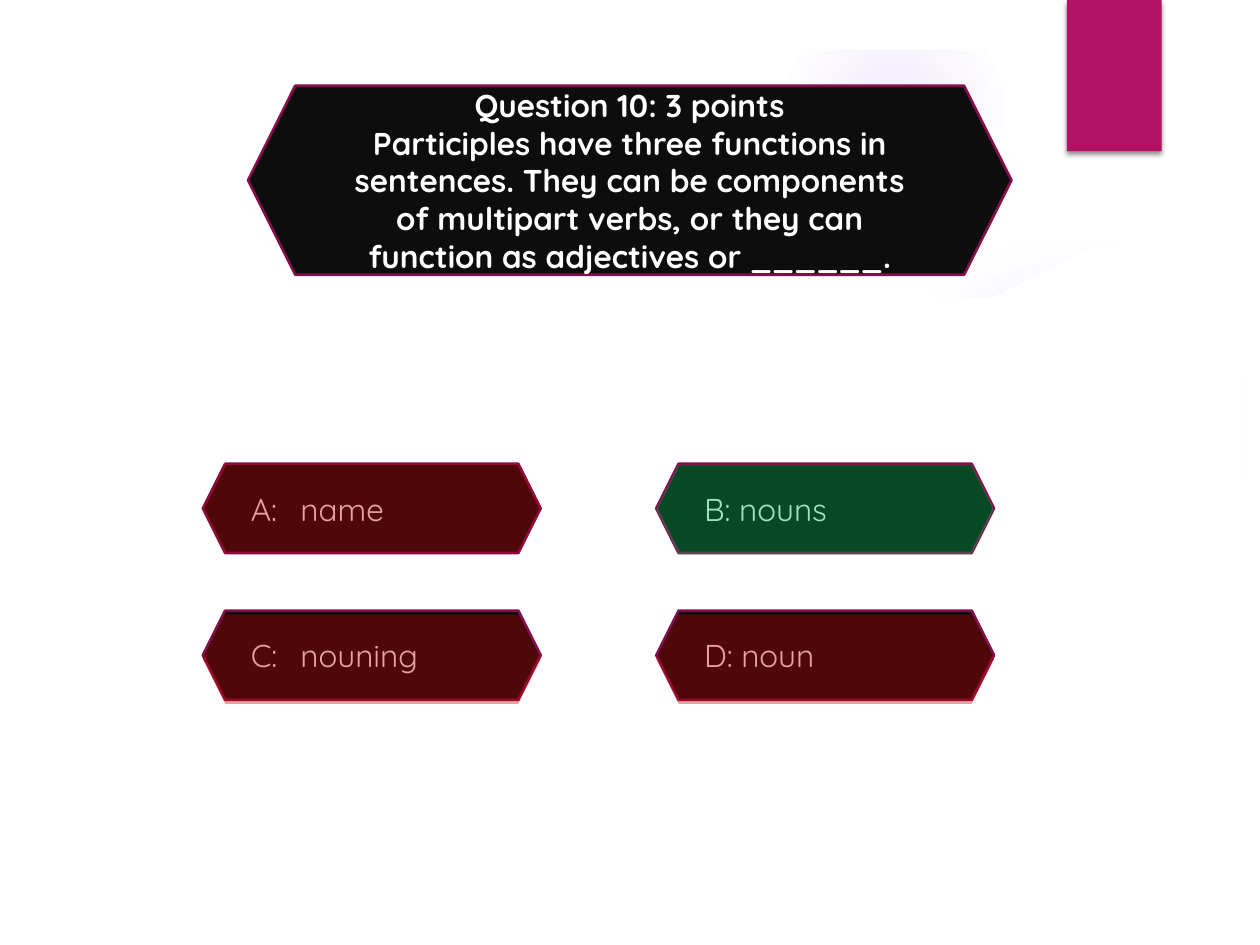
from lxml import etree
from pptx import Presentation
from pptx import util as u
from pptx.dml import color
from pptx.enum import shapes, text
from pptx.oxml import ns

Cm = u.Cm
hues = {"ink": "0D0D0D", "edge": "840D4B", "tab": "B31166", "white": "FFFFFF",
        "glow": "9B6BF2", "right": "00B050", "wrong": "C00000", "shade": "000000"}

deck = Presentation()
deck.slide_width, deck.slide_height = Cm(25.4), Cm(19.05)
slide = deck.slides.add_slide(deck.slide_layouts[6])


def paint(shape, fill, line=None):
    shape.shadow.inherit = False
    shape.fill.solid()
    shape.fill.fore_color.rgb = color.RGBColor.from_string(hues[fill])
    if line:
        shape.line.color.rgb = color.RGBColor.from_string(hues[line])
        shape.line.width = u.Pt(1.5)
    else:
        shape.line.fill.background()
    return shape


def add(kind, x, y, w, h, fill, line=None):
    box = slide.shapes.add_shape(kind, Cm(x), Cm(y), Cm(w), Cm(h))
    return paint(box, fill, line)


glows = [(17.5, 4.65, 7.82, [(0, 7), (36, 6), (69, 0)]),
         (15.8, 0, 4.45, [(0, 14), (36, 7), (73, 0)])]
for x, y, size, stops in glows:
    glow = add(shapes.MSO_SHAPE.OVAL, x, y, size, size, "glow")
    marks = "".join(
        f'<a:gs pos="{pos * 1000}"><a:srgbClr val="{hues["glow"]}">'
        f'<a:alpha val="{alpha * 1000}"/></a:srgbClr></a:gs>' for pos, alpha in stops)
    grad = etree.fromstring(
        f'<a:gradFill {ns.nsdecls("a")}><a:gsLst>{marks}</a:gsLst><a:path path="circle">'
        '<a:fillToRect l="50000" t="50000" r="50000" b="50000"/></a:path></a:gradFill>')
    solid = glow.element.spPr.find(ns.qn("a:solidFill"))
    glow.element.spPr.replace(solid, grad)

curve = [(1.35, 5.16), (4.39, 5.51), (7.8, 5.79), (11.15, 5.92), (14.91, 5.94),
         (17.88, 5.82), (19.94, 5.69), (21.98, 5.46), (24.05, 5.16)]
panel = slide.shapes.build_freeform(1.35, 17.75, scale=Cm(1))
panel.add_line_segments(curve + [(24.05, 17.75)])
paint(panel.convert_to_shape(), "white")

frame = slide.shapes.build_freeform(0, 0, scale=Cm(1))
frame.add_line_segments([(0, 19.05), (25.4, 19.05), (25.4, 0)])
frame.move_to(24, 17.65)
frame.add_line_segments([(1.42, 17.65), (1.42, 1.42), (24, 1.42)])
paint(frame.convert_to_shape(), "white")

flag = add(shapes.MSO_SHAPE.RECTANGLE, 21.51, 0, 1.91, 3.05, "tab")
flag.element.spPr.find(ns.qn("a:effectLst")).append(etree.fromstring(
    f'<a:outerShdw {ns.nsdecls("a")} blurRad="{u.Pt(3)}" dist="{u.Pt(2)}" dir="5400000">'
    f'<a:srgbClr val="{hues["shade"]}"><a:alpha val="45000"/></a:srgbClr></a:outerShdw>'))

hexa = shapes.MSO_SHAPE.HEXAGON
wide, high = 6.81, 1.8
cols, rows = (4.09, 13.23), (9.35, 12.31)
words = ["A:\tname", "B: nouns", "C:\tnouning", "D: noun"]
spots = [(x, y) for y in rows for x in cols]
boxes = [(add(hexa, x, y, wide, high, "ink", "edge"), [word], text.PP_ALIGN.LEFT)
         for (x, y), word in zip(spots, words)]

ask = add(hexa, 5, 1.73, 15.39, 3.81, "ink", "edge")
lines = ["Question 10: 3 points",
         "Participles have three functions in sentences. They can be components "
         "of multipart verbs, or they can function as adjectives or ______."]
boxes.append((ask, lines, text.PP_ALIGN.CENTER))

for box, lines, align in boxes:
    body = box.text_frame
    body.word_wrap = True
    body.vertical_anchor = text.MSO_ANCHOR.MIDDLE
    body.text = "\n".join(lines)
    for para in body.paragraphs:
        para.alignment = align
        if "\t" in para.text:
            tabs = etree.SubElement(para._p.get_or_add_pPr(), ns.qn("a:tabLst"))
            etree.SubElement(tabs, ns.qn("a:tab"), pos=str(Cm(1)), algn="l")
        para.font.name = "Quicksand"
        para.font.size = u.Pt(18)
        para.font.bold = box is ask
        para.font.color.rgb = color.RGBColor.from_string(hues["white"])

for (x, y), mark, drop in zip(spots, ["wrong", "right", "wrong", "wrong"],
                              [0, 0.02, 0.08, 0.08]):
    veil = add(hexa, x, y + drop, wide, high, mark)
    tint = veil.element.spPr.find(ns.qn("a:solidFill"))[0]
    etree.SubElement(tint, ns.qn("a:alpha"), val="37000")

deck.save("out.pptx")
